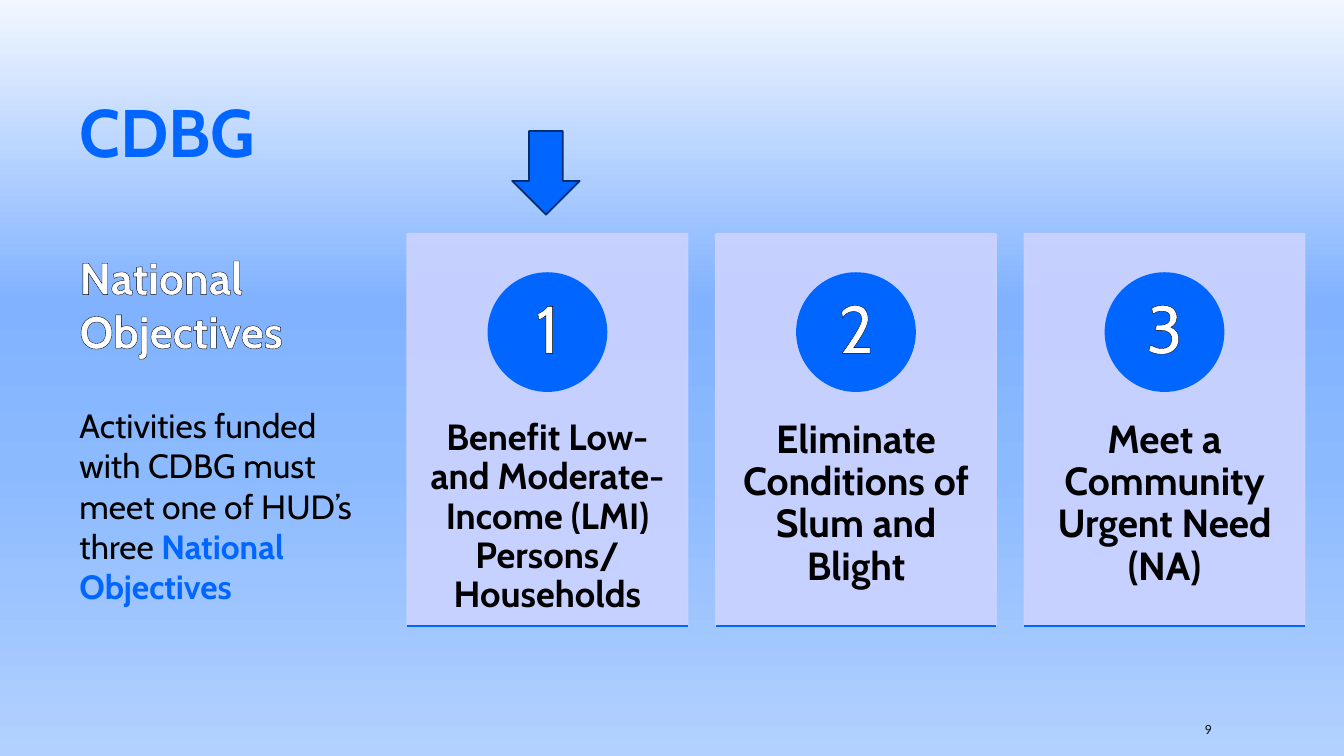
from lxml import etree
from pptx import Presentation
from pptx.dml.color import RGBColor
from pptx.enum import shapes, text
from pptx.oxml.ns import qn
from pptx.util import Inches, Pt

BLUE, NAVY, LILAC = "0066FF", "002D70", "CCD3FF"
BLACK, WHITE = "000000", "FFFFFF"
BACKGROUND = [(0, "F2F7FF"), (40, "80B2FF"), (62, "8CBAFF"), (100, "B2D1FF")]
OBJECTIVES = [
    ("Benefit Low- and Moderate-Income (LMI) Persons/ Households", 26),
    ("Eliminate Conditions of Slum and Blight", 28),
    ("Meet a Community Urgent Need (NA)", 28),
]
CARD_LEFT, CARD_TOP, CARD_W, CARD_H, CARD_STEP = 4.04, 2.32, 2.78, 3.89, 3.06
CIRCLE, NUMBER = 1.17, 0.82


def rgb(color):
    return RGBColor.from_string(color)


def set_background(s, stops):
    fill = s.background.fill
    fill.gradient()
    fill.gradient_angle = 270  # top to bottom
    stop_list = s.element.find(".//" + qn("a:gsLst"))
    for old in list(stop_list):
        stop_list.remove(old)
    for position, color in stops:
        stop = etree.SubElement(stop_list, qn("a:gs"), pos=str(position * 1000))
        etree.SubElement(stop, qn("a:srgbClr"), val=color)


def add_block(parent, kind, box, color, line=None, opacity=None):
    sp = parent.add_shape(kind, *map(Inches, box))
    sp.shadow.inherit = False
    sp.fill.solid()
    sp.fill.fore_color.rgb = rgb(color)
    sp.line.color.rgb = rgb(line or color)
    sp.line.width = Pt(1.25)
    if opacity:
        for clr in sp.element.spPr.iter(qn("a:srgbClr")):
            etree.SubElement(clr, qn("a:alpha"), val=str(opacity * 1000))
    return sp


def add_rule(parent, left, top, width):
    line = parent.add_connector(shapes.MSO_CONNECTOR.STRAIGHT, Inches(left),
                                Inches(top), Inches(left + width), Inches(top))
    line.line.color.rgb = rgb(BLUE)
    line.line.width = Pt(1.25)
    etree.SubElement(line.element.spPr, qn("a:effectLst"))


def format_run(r, size, color, bold=False, font="Cabin", outline=False):
    r.font.name, r.font.size, r.font.bold = font, Pt(size), bold
    r.font.color.rgb = rgb(color)
    if outline:
        ln = etree.Element(qn("a:ln"), w=str(Pt(0.75)))
        fill = etree.SubElement(ln, qn("a:solidFill"))
        etree.SubElement(fill, qn("a:srgbClr"), val=BLACK)
        r.font._element.insert(0, ln)


def add_text(parent, box, words, size, color, insets=(0.1, 0.05),
             middle=False, centered=False, **style):
    tf = parent.add_textbox(*map(Inches, box)).text_frame
    tf.word_wrap = True
    tf.margin_left = tf.margin_right = Inches(insets[0])
    tf.margin_top = tf.margin_bottom = Inches(insets[1])
    if middle:
        tf.vertical_anchor = text.MSO_ANCHOR.MIDDLE
    tf.text = words
    p = tf.paragraphs[0]
    if centered:
        p.alignment = text.PP_ALIGN.CENTER
        p.line_spacing = 0.9
    format_run(p.runs[0], size, color, **style)
    return tf


def add_card(s, index, words, size):
    card = s.shapes.add_group_shape().shapes
    left = CARD_LEFT + index * CARD_STEP
    middle = left + CARD_W / 2
    # Panel and objective
    add_block(card, shapes.MSO_SHAPE.RECTANGLE,
              (left, CARD_TOP, CARD_W, CARD_H), LILAC, opacity=90)
    add_text(card, (left, 3.8, CARD_W, 2.33), words, size, BLACK,
             insets=(0.22, 0.36), centered=True, bold=True)
    # Numbered circle
    add_block(card, shapes.MSO_SHAPE.OVAL,
              (middle - CIRCLE / 2, 2.71, CIRCLE, CIRCLE), BLUE)
    add_text(card, (middle - NUMBER / 2, 2.88, NUMBER, NUMBER), str(index + 1),
             48, WHITE, insets=(0.09, 0.01), middle=True, centered=True,
             outline=True)
    # Bottom edge
    add_rule(card, left, CARD_TOP + CARD_H, CARD_W)


def add_intro(s):
    tf = add_text(s.shapes, (0.69, 2.43, 3.14, 3.26), "National Objectives",
                  32, WHITE, bold=True, outline=True)
    p = tf.add_paragraph()
    p.space_before = Pt(34)
    p.text = "Activities funded with CDBG must meet one of HUD’s three "
    format_run(p.runs[0], 24, BLACK)
    r = p.add_run()
    r.text = "National Objectives"
    format_run(r, 24, BLUE, bold=True)


def main():
    prs = Presentation()
    prs.slide_width, prs.slide_height = Inches(13.33), Inches(7.5)
    s = prs.slides.add_slide(prs.slide_layouts[6])
    set_background(s, BACKGROUND)

    # Title and introduction
    add_text(s.shapes, (0.69, 0.85, 6.41, 0.91), "CDBG", 48, BLUE, bold=True)
    add_intro(s)

    # Objective cards
    for index, (words, size) in enumerate(OBJECTIVES):
        add_card(s, index, words, size)

    # Page number and arrow to the first card
    add_text(s.shapes, (11.85, 7.08, 1.06, 0.3), "9", 10, "0D0D0D",
             middle=True, font="Calibri")
    add_block(s.shapes, shapes.MSO_SHAPE.DOWN_ARROW,
              (5.08, 1.3, 0.67, 0.83), BLUE, line=NAVY)
    prs.save("out.pptx")


if __name__ == "__main__":
    main()
